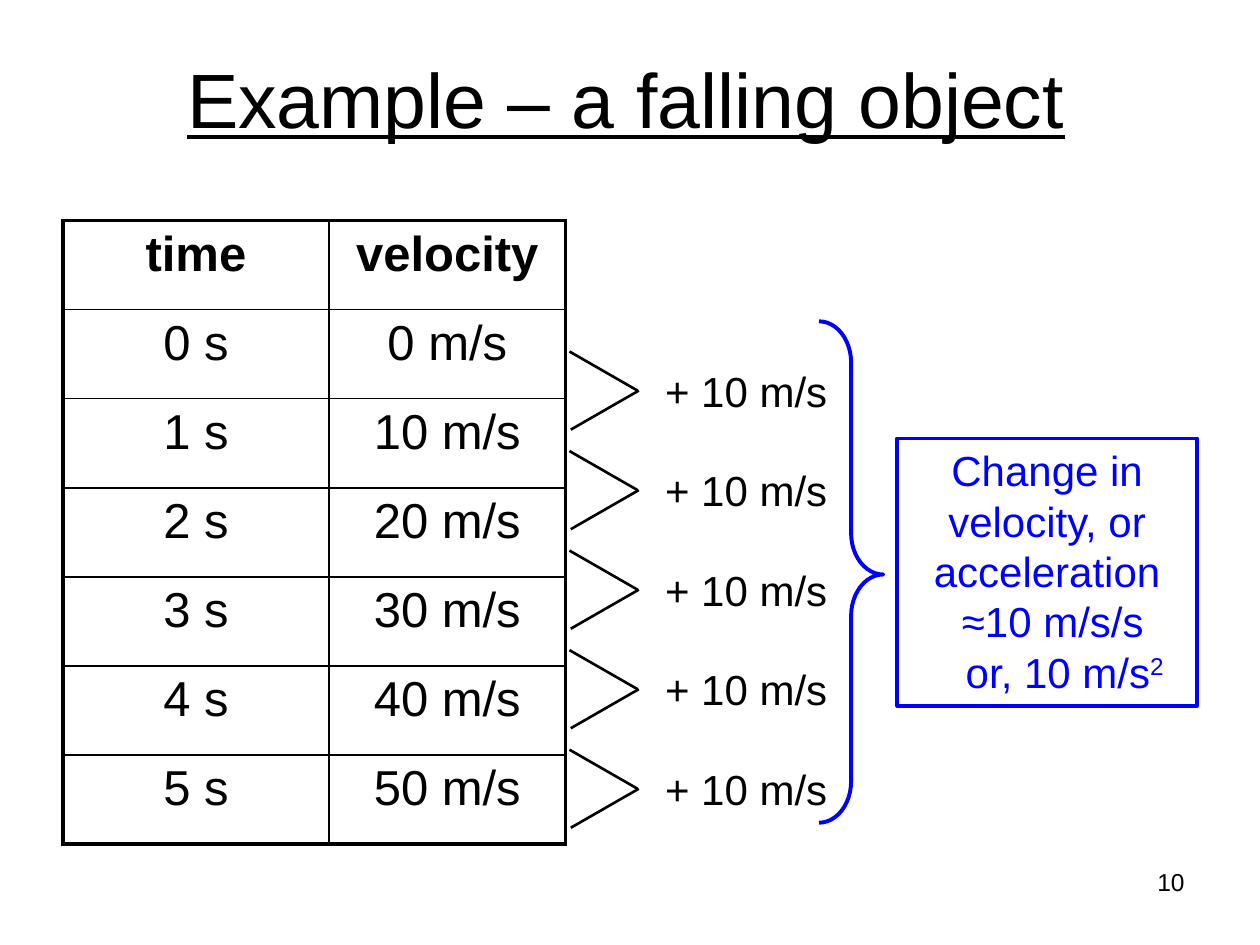
"""Build a slide on the acceleration of a falling object."""
from lxml import etree
from pptx import Presentation
from pptx.dml.color import RGBColor
from pptx.enum.shapes import MSO_CONNECTOR, MSO_SHAPE
from pptx.enum.text import MSO_ANCHOR, MSO_AUTO_SIZE, PP_ALIGN
from pptx.oxml.ns import qn
from pptx.util import Inches, Pt

BLACK = RGBColor(0x00, 0x00, 0x00)
BLUE = RGBColor(0x00, 0x00, 0xFF)
LEFT, CENTER, RIGHT = PP_ALIGN.LEFT, PP_ALIGN.CENTER, PP_ALIGN.RIGHT
TOP, MIDDLE = MSO_ANCHOR.TOP, MSO_ANCHOR.MIDDLE
STRAIGHT = MSO_CONNECTOR.STRAIGHT
THIN, THICK = 1, 2.25


def add_run(p, text, size, align=LEFT, color=BLACK, **formats):
    p.alignment = align
    r = p.add_run()
    r.text = text
    r.font.color.rgb = color
    for name, value in {"name": "Arial", "size": Pt(size), **formats}.items():
        setattr(r.font, name, value)
    return r


def add_border(cell, side, width):
    ln = etree.SubElement(cell._tc.get_or_add_tcPr(), qn(f"a:ln{side}"), w=str(Pt(width)))
    fill = etree.SubElement(ln, qn("a:solidFill"))
    etree.SubElement(fill, qn("a:srgbClr"), val=str(BLACK))


prs = Presentation()
prs.slide_width, prs.slide_height = Inches(10), Inches(7.5)
s = prs.slides.add_slide(prs.slide_layouts[5])

title = s.shapes.title
title.left, title.top = Inches(0.47), Inches(0.15)
title.width, title.height = Inches(9), Inches(1.25)
title.text_frame.vertical_anchor = MIDDLE
add_run(title.text_frame.paragraphs[0], "Example – a falling object", 44, CENTER, underline=True)

rows = [("time", "velocity")] + [(f"{t} s", f"{10 * t} m/s") for t in range(6)]
last = len(rows) - 1
frame = s.shapes.add_table(len(rows), 2, Inches(0.5), Inches(1.75), Inches(3.99), Inches(4.95))
table = frame.table
table.columns[0].width, table.columns[1].width = Inches(2.11), Inches(1.88)
for i, row in enumerate(rows):
    for j, text in enumerate(row):
        cell = table.cell(i, j)
        add_run(cell.text_frame.paragraphs[0], text, 28, CENTER, bold=i == 0)
        outer = {"L": j == 0, "R": j == 1, "T": i == 0, "B": i == last}
        for side, is_outer in outer.items():
            add_border(cell, side, THICK if is_outer else THIN)
        cell.fill.background()

for step in range(5):
    y = 2.79 + 0.79 * step
    group = s.shapes.add_group_shape()
    tb = group.shapes.add_textbox(Inches(5.18), Inches(y + 0.06), Inches(1.49), Inches(0.5))
    tb.text_frame.word_wrap = False
    add_run(tb.text_frame.paragraphs[0], "+ 10 m/s", 24)
    for x, start in ((4.52, y), (4.53, y + 0.62)):
        line = group.shapes.add_connector(
            STRAIGHT, Inches(x), Inches(start), Inches(x + 0.54), Inches(y + 0.31))
        line.line.color.rgb = BLACK
        line.line.width = Pt(1.5)
        etree.SubElement(line._element.spPr, qn("a:effectLst"))

brace = s.shapes.add_shape(
    MSO_SHAPE.RIGHT_BRACE, Inches(6.5), Inches(2.55), Inches(0.51), Inches(3.98))
brace.adjustments[0], brace.adjustments[1] = 0.645, 0.505
box = s.shapes.add_shape(
    MSO_SHAPE.RECTANGLE, Inches(7.12), Inches(3.48), Inches(2.38), Inches(2.12))
for sp in (brace, box):
    sp.shadow.inherit = False
    sp.fill.background()
    sp.line.color.rgb = BLUE
    sp.line.width = Pt(THICK)

tf = box.text_frame
for name, value in {"word_wrap": True, "vertical_anchor": TOP,
                    "auto_size": MSO_AUTO_SIZE.SHAPE_TO_FIT_TEXT}.items():
    setattr(tf, name, value)
conclusion = [("Change in velocity, or", 0), ("acceleration", 0),
              ("≈10 m/s/s", 0.09), ("or, 10 m/s", 0.28)]
for i, (text, indent) in enumerate(conclusion):
    p = tf.paragraphs[0] if i == 0 else tf.add_paragraph()
    add_run(p, text, 24, CENTER, BLUE)
    p._p.get_or_add_pPr().set("marL", str(Inches(indent)))
exponent = add_run(p, "2", 24, CENTER, BLUE)
exponent._r.get_or_add_rPr().set("baseline", "30000")

number = s.shapes.add_textbox(Inches(7.17), Inches(6.83), Inches(2.33), Inches(0.52))
number.text_frame.word_wrap = True
add_run(number.text_frame.paragraphs[0], "10", 14, RIGHT)

prs.save("out.pptx")
